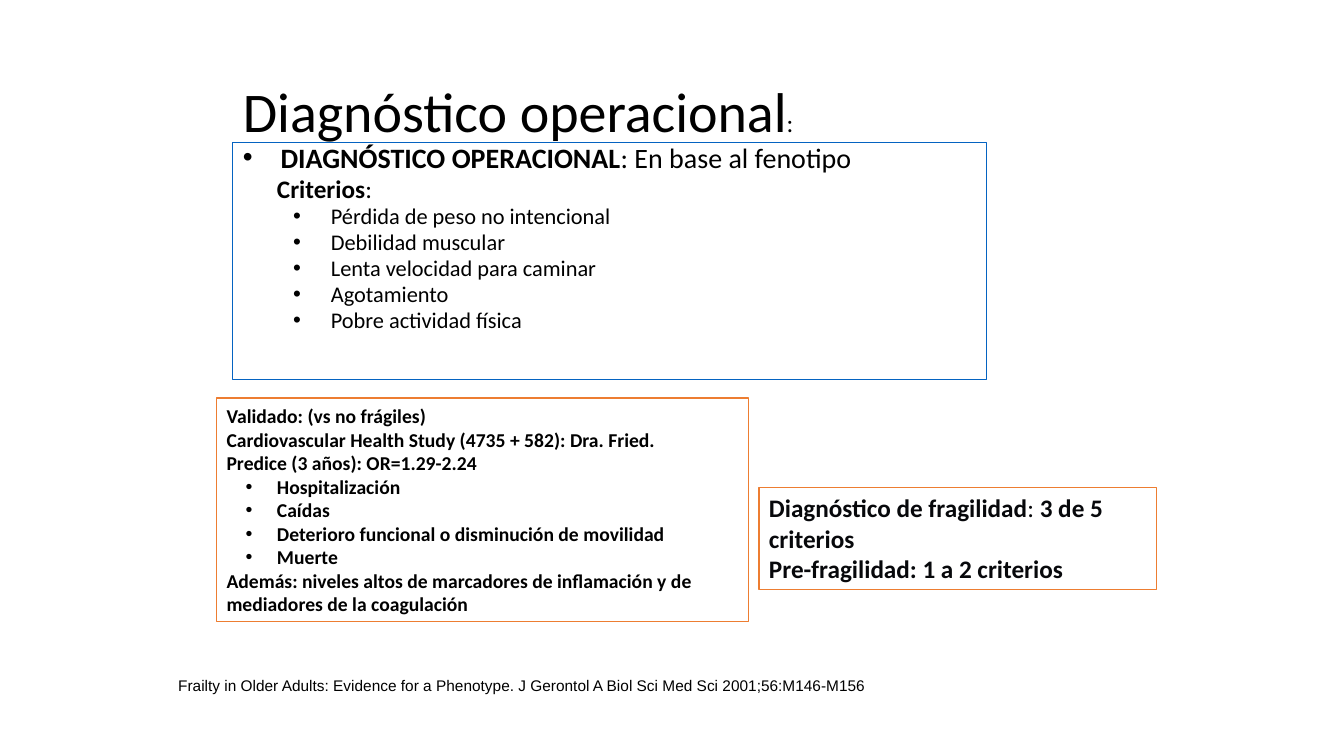
from pptx import Presentation
from pptx.dml.color import RGBColor
from pptx.enum.shapes import MSO_SHAPE
from pptx.enum.text import MSO_ANCHOR, PP_ALIGN
from pptx.oxml.ns import qn
from pptx.util import Cm, Pt
from lxml.etree import SubElement


def color(value):
    return RGBColor.from_string(value)


class FrailtySlide:
    """Hold the text style and the current slide, and draw its elements."""

    font = "Calibri"
    ink = "000000"

    def __init__(self, deck):
        self.slide = deck.slides.add_slide(deck.slide_layouts[6])

    def panel(self, place, border, width, fill=None, anchor=MSO_ANCHOR.TOP):
        box = self.slide.shapes.add_shape(MSO_SHAPE.RECTANGLE, *map(Cm, place))
        box.shadow.inherit = False
        if fill:
            box.fill.solid()
            box.fill.fore_color.rgb = color(fill)
        else:
            box.fill.background()
        box.line.color.rgb = color(border)
        box.line.width = Pt(width)
        box.text_frame.word_wrap = True
        box.text_frame.vertical_anchor = anchor
        return box.text_frame

    def label(self, place, wrap=True):
        frame = self.slide.shapes.add_textbox(*map(Cm, place)).text_frame
        frame.word_wrap = wrap
        return frame

    def line(self, frame, runs, size, margin=0, hang=0, spacing=None, font=None, ink=None):
        first = not frame.paragraphs[0].runs
        paragraph = frame.paragraphs[0] if first else frame.add_paragraph()
        properties = paragraph._p.get_or_add_pPr()
        properties.set("marL", str(Cm(margin)))
        properties.set("indent", str(-Cm(hang)))
        if hang:
            SubElement(properties, qn("a:buFont")).set("typeface", "Arial")
            SubElement(properties, qn("a:buChar")).set("char", "•")
        paragraph.alignment = PP_ALIGN.LEFT
        if spacing:
            paragraph.line_spacing = spacing
            if not first:
                paragraph.space_before = Pt(round(size * 0.2, 1))
        for text, bold, *own_size in runs:
            run = paragraph.add_run()
            run.text = text
            run.font.name = font or self.font
            run.font.size = Pt(own_size[0] if own_size else size)
            run.font.bold = bold
            run.font.color.rgb = color(ink or self.ink)


def main():
    deck = Presentation()
    deck.slide_width, deck.slide_height = Cm(33.87), Cm(19.05)
    page = FrailtySlide(deck)

    validation = page.panel((5.46, 10.03, 13.41, 5.64), "ED7D31", 1, "FFFFFF", MSO_ANCHOR.MIDDLE)
    for text in (
        "Validado: (vs no frágiles)",
        "Cardiovascular Health Study (4735 + 582): Dra. Fried.",
        "Predice (3 años): OR=1.29-2.24",
    ):
        page.line(validation, [(text, True)], 14)
    for outcome in (
        "Hospitalización",
        "Caídas",
        "Deterioro funcional o disminución de movilidad",
        "Muerte",
    ):
        page.line(validation, [(outcome, True)], 14, 1.27, 0.79)
    markers = "Además: niveles altos de marcadores de inflamación y de mediadores de la coagulación"
    page.line(validation, [(markers, True)], 14)

    phenotype = page.panel((5.87, 3.58, 19, 5.99), "0563C1", 0.75)
    heading = [("DIAGNÓSTICO OPERACIONAL", True), (": En base al fenotipo", False)]
    page.line(phenotype, heading, 20, 0.95, 0.95, 0.8)
    page.line(phenotype, [("Criterios", True), (":", False)], 18, 0.86, spacing=0.8)
    for criterion in (
        "Pérdida de peso no intencional",
        "Debilidad muscular",
        "Lenta velocidad para caminar",
        "Agotamiento",
        "Pobre actividad física",
    ):
        page.line(phenotype, [(criterion, False)], 16, 2.22, 0.95, 0.8)

    citation = page.label((4.24, 16.92, 25.1, 0.74))
    reference = (
        "Frailty in Older Adults: Evidence for a Phenotype. "
        "J Gerontol A Biol Sci Med Sci 2001;56:M146-M156"
    )
    page.line(citation, [(reference, False)], 11, font="Arial")

    threshold = page.panel((19.13, 12.29, 10.01, 2.57), "ED7D31", 1, "FFFFFF")
    frailty = [("Diagnóstico de fragilidad", True), (": ", False), ("3 de 5 criterios", True)]
    for runs in (frailty, [("Pre-fragilidad: 1 a 2 criterios", True)]):
        page.line(threshold, runs, 18, ink="07080B")

    title = page.label((5.87, 1.8, 14.53, 1.96), wrap=False)
    page.line(title, [("Diagnóstico operacional", False), (":", False, 18)], 40)

    deck.save("out.pptx")


if __name__ == "__main__":
    main()
